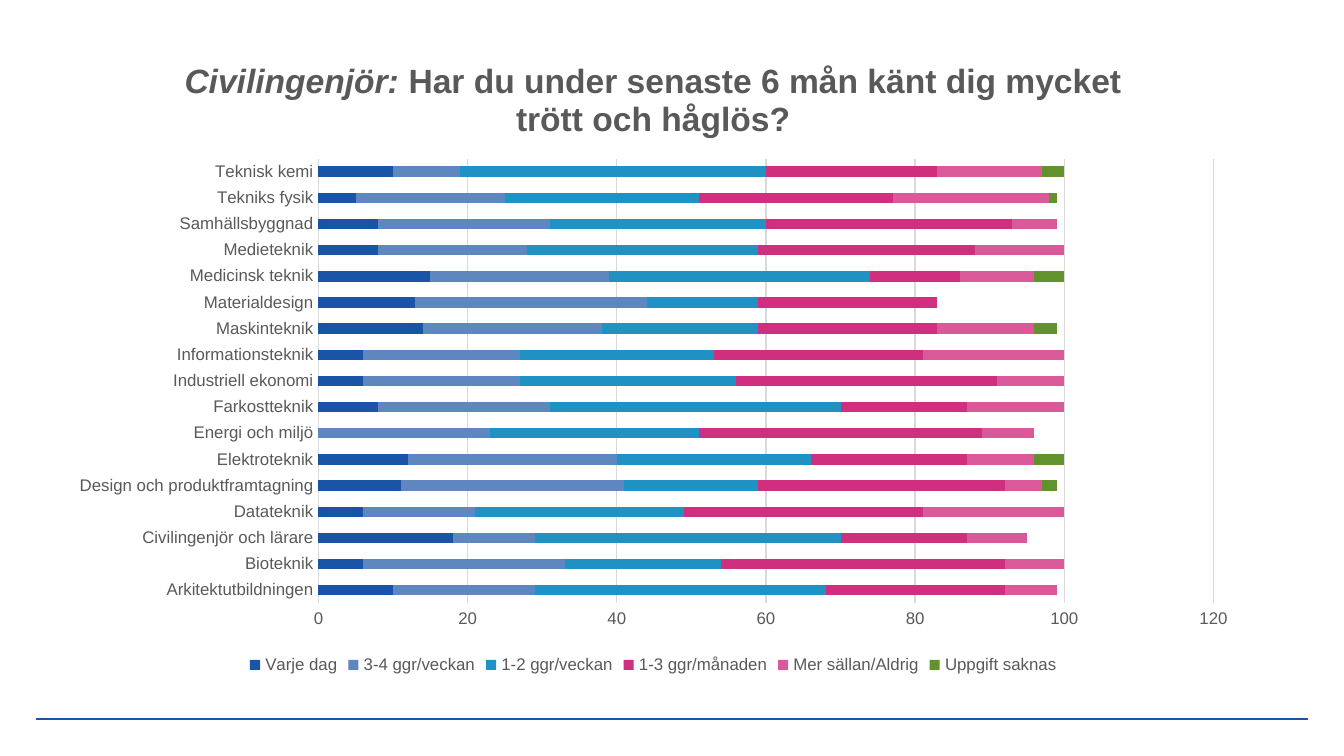
from lxml.etree import SubElement
from pptx import Presentation
from pptx.chart.data import CategoryChartData
from pptx.dml.color import RGBColor
from pptx.enum.chart import XL_CHART_TYPE, XL_LEGEND_POSITION, XL_TICK_MARK
from pptx.enum.shapes import MSO_CONNECTOR
from pptx.oxml import parse_xml
from pptx.oxml.ns import nsdecls, qn
from pptx.util import Inches, Pt

TITLE = [("Civilingenjör: ", True),
         ("Har du under senaste 6 mån känt dig mycket trött och håglös?", False)]
ANSWERS = [("Varje dag", "1954A6"), ("3-4 ggr/veckan", "5E87C0"),
           ("1-2 ggr/veckan", "2091C3"), ("1-3 ggr/månaden", "D02F80"),
           ("Mer sällan/Aldrig", "D95999"), ("Uppgift saknas", "61922E")]
# Each programme with its share of every answer, bottom bar first
PROGRAMMES = [
    ("Arkitektutbildningen", (10, 19, 39, 24, 7, 0)),
    ("Bioteknik", (6, 27, 21, 38, 8, 0)),
    ("Civilingenjör och lärare", (18, 11, 41, 17, 8, 0)),
    ("Datateknik", (6, 15, 28, 32, 19, 0)),
    ("Design och produktframtagning", (11, 30, 18, 33, 5, 2)),
    ("Elektroteknik", (12, 28, 26, 21, 9, 4)),
    ("Energi och miljö", (0, 23, 28, 38, 7, 0)),
    ("Farkostteknik", (8, 23, 39, 17, 13, 0)),
    ("Industriell ekonomi", (6, 21, 29, 35, 9, 0)),
    ("Informationsteknik", (6, 21, 26, 28, 19, 0)),
    ("Maskinteknik", (14, 24, 21, 24, 13, 3)),
    ("Materialdesign", (13, 31, 15, 24, 0, 0)),
    ("Medicinsk teknik", (15, 24, 35, 12, 10, 4)),
    ("Medieteknik", (8, 20, 31, 29, 12, 0)),
    ("Samhällsbyggnad", (8, 23, 29, 33, 6, 0)),
    ("Tekniks fysik", (5, 20, 26, 26, 21, 1)),
    ("Teknisk kemi", (10, 9, 41, 23, 14, 3)),
]
THEME = {"font": "Arial", "text": "595959", "grid": "D9D9D9", "rule": "1954A6",
         "title_size": 18, "label_size": 9}
PAGE_WIDTH = 10
PAGE_HEIGHT = PAGE_WIDTH * 9 / 16
CHART_WIDTH, CHART_HEIGHT = 8.9, 4.79
PLOT_AREA = {"x": 1.96 / CHART_WIDTH, "y": 0.91 / CHART_HEIGHT,
             "w": 6.66 / CHART_WIDTH, "h": 3.31 / CHART_HEIGHT}


def color(code):
    return RGBColor.from_string(code)


def style_font(font, size=THEME["label_size"], bold=False, italic=False):
    font.name = THEME["font"]
    font.size = Pt(size)
    font.bold = bold
    font.italic = italic
    font.color.rgb = color(THEME["text"])


def style_line(line, code, width):
    line.color.rgb = color(code)
    line.width = Pt(width)


def add_rule(page):
    rule = page.shapes.add_connector(MSO_CONNECTOR.STRAIGHT, Inches(0.27), Inches(5.35),
                                     Inches(9.73), Inches(5.35))
    style_line(rule.line, THEME["rule"], 1)
    SubElement(rule._element.spPr, qn("a:effectLst"))


def add_answer_chart(page):
    data = CategoryChartData(number_format="General")
    data.categories = [name for name, _ in PROGRAMMES]
    shares = zip(*(values for _, values in PROGRAMMES))
    for (answer, _), values in zip(ANSWERS, shares):
        data.add_series(answer, values)
    chart = page.shapes.add_chart(XL_CHART_TYPE.BAR_STACKED, Inches(0.41), Inches(0.27),
                                  Inches(CHART_WIDTH), Inches(CHART_HEIGHT), data).chart
    style_font(chart.font)
    plot = chart.plots[0]
    plot.gap_width, plot.overlap, plot.vary_by_categories = 150, 100, False
    for series, (_, code) in zip(plot.series, ANSWERS):
        series.format.fill.solid()
        series.format.fill.fore_color.rgb = color(code)
    return chart


def style_title(chart):
    chart.has_title = True
    paragraph = chart.chart_title.text_frame.paragraphs[0]
    style_font(paragraph.font, THEME["title_size"], bold=True)
    for text, italic in TITLE:
        span = paragraph.add_run()
        span.text = text
        style_font(span.font, THEME["title_size"], bold=True, italic=italic)


def style_axes(chart):
    for axis in (chart.category_axis, chart.value_axis):
        axis.major_tick_mark = axis.minor_tick_mark = XL_TICK_MARK.NONE
        style_font(axis.tick_labels.font)
    style_line(chart.category_axis.format.line, THEME["grid"], 0.75)
    values = chart.value_axis
    values.minimum_scale, values.maximum_scale, values.major_unit = 0, 120, 20
    values.format.line.fill.background()
    values.has_major_gridlines = True
    style_line(values.major_gridlines.format.line, THEME["grid"], 0.75)


def style_legend(chart):
    chart.has_legend = True
    chart.legend.position = XL_LEGEND_POSITION.BOTTOM
    chart.legend.include_in_layout = False
    style_font(chart.legend.font)


def place_plot(chart):
    """Fix the inner plot area as fractions of the chart."""
    area = chart.plots[0]._element.getparent()
    for layout in area.findall(qn("c:layout")):
        area.remove(layout)
    modes = "".join(f'<c:{side}Mode val="edge"/>' for side in "xy")
    sizes = "".join(f'<c:{key} val="{value:.4f}"/>' for key, value in PLOT_AREA.items())
    area.insert(0, parse_xml(
        f'<c:layout {nsdecls("c")}><c:manualLayout><c:layoutTarget val="inner"/>'
        f'{modes}{sizes}</c:manualLayout></c:layout>'))


def main():
    deck = Presentation()
    deck.slide_width, deck.slide_height = Inches(PAGE_WIDTH), Inches(PAGE_HEIGHT)
    page = deck.slides.add_slide(deck.slide_layouts[6])
    add_rule(page)
    chart = add_answer_chart(page)
    style_title(chart)
    style_axes(chart)
    style_legend(chart)
    place_plot(chart)
    deck.save("out.pptx")


if __name__ == "__main__":
    main()
